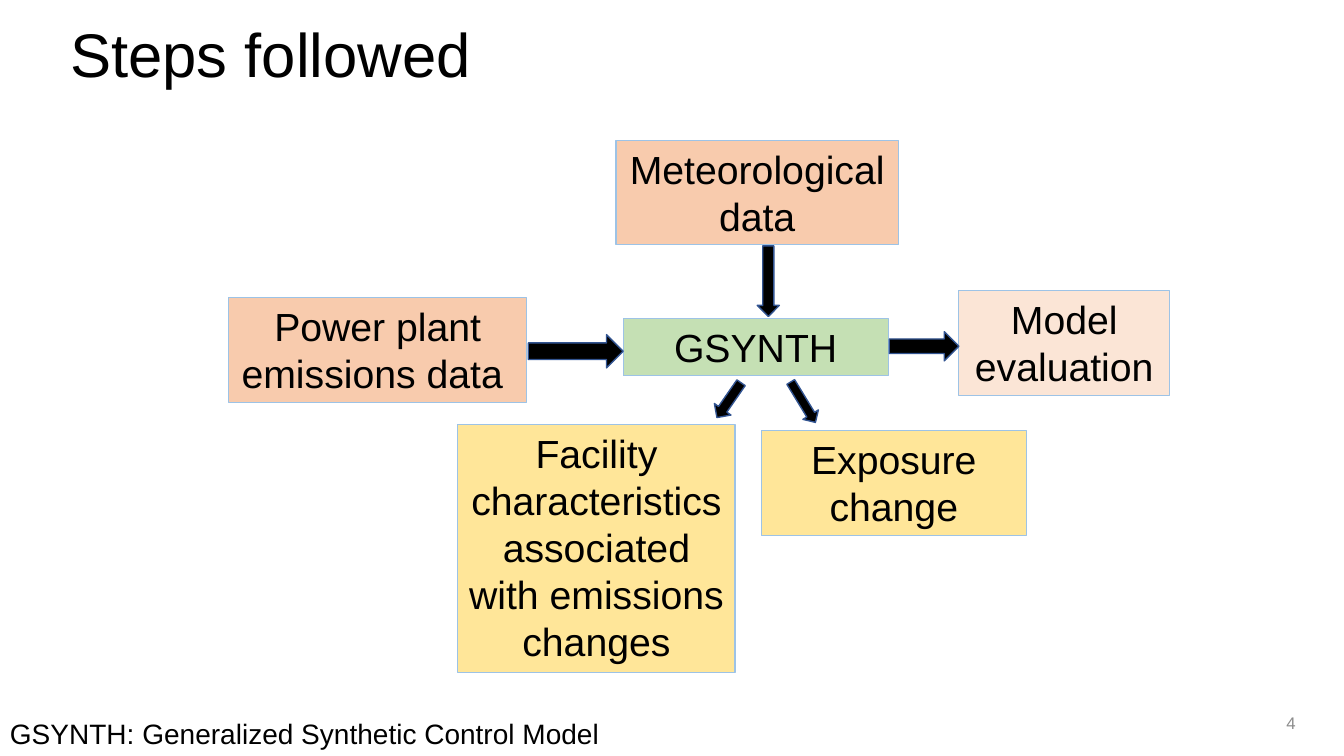
from typing import NamedTuple

from pptx import Presentation
from pptx.dml.color import RGBColor
from pptx.enum.shapes import MSO_SHAPE as Shape
from pptx.enum.text import MSO_ANCHOR as Anchor, PP_ALIGN as Align
from pptx.util import Emu, Pt

SCALE = 9144  # EMU per px, 100 px to the inch

BLACK = RGBColor(0x00, 0x00, 0x00)
GRAY = RGBColor(0x8C, 0x8C, 0x8C)
PEACH = RGBColor(0xF8, 0xCB, 0xAD)
PALE = RGBColor(0xFB, 0xE5, 0xD6)
GREEN = RGBColor(0xC5, 0xE0, 0xB4)
YELLOW = RGBColor(0xFF, 0xE6, 0x99)
SKY = RGBColor(0x9D, 0xC3, 0xE6)
NAVY = RGBColor(0x32, 0x54, 0x91)


class Area(NamedTuple):
    left: int
    top: int
    width: int
    height: int


class Box(NamedTuple):
    text: str
    area: Area
    fill: RGBColor


class Arrow(NamedTuple):
    area: Area
    turn: float = 0


BOXES = [
    Box("Power plant emissions data ", Area(227, 295, 295, 104), PEACH),
    Box("Meteorological data", Area(611, 139, 280, 104), PEACH),
    Box("GSYNTH", Area(618, 316, 263, 57), GREEN),
    Box("Facility characteristics associated with emissions changes",
        Area(454, 421, 275, 246), YELLOW),
    Box("Exposure change", Area(755, 427, 263, 104), YELLOW),
    Box("Model evaluation", Area(951, 288, 209, 104), PALE),
]

ARROWS = [
    Arrow(Area(727, 268, 70, 22), 90),
    Arrow(Area(702, 387, 42, 20), 124.7),
    Arrow(Area(773, 390, 47, 18), 58.6),
    Arrow(Area(524, 332, 94, 33)),
    Arrow(Area(882, 329, 69, 29)),
]


def px(count: int) -> Emu:
    return Emu(count * SCALE)


def put_text(shape, text: str, *, size: int, color: RGBColor = BLACK,
             align: Align = Align.LEFT, anchor: Anchor = Anchor.TOP,
             space: float = 1.0) -> None:
    frame = shape.text_frame
    frame.word_wrap = True
    frame.vertical_anchor = anchor
    para = frame.paragraphs[0]
    para.alignment = align
    para.line_spacing = space
    run = para.add_run()
    run.text = text
    run.font.name = "Arial"
    run.font.size = Pt(size)
    run.font.color.rgb = color


def add_label(slide, area: Area, text: str, **style) -> None:
    put_text(slide.shapes.add_textbox(*map(px, area)), text, **style)


def add_form(slide, kind: Shape, area: Area, fill: RGBColor,
             line: RGBColor, width: float):
    form = slide.shapes.add_shape(kind, *map(px, area))
    form.shadow.inherit = False
    form.fill.solid()
    form.fill.fore_color.rgb = fill
    form.line.color.rgb = line
    form.line.width = Pt(width)
    return form


def add_box(slide, box: Box) -> None:
    form = add_form(slide, Shape.RECTANGLE, box.area, box.fill, SKY, 0.75)
    put_text(form, box.text, size=28, align=Align.CENTER)


def add_arrow(slide, arrow: Arrow) -> None:
    form = add_form(slide, Shape.RIGHT_ARROW, arrow.area, BLACK, NAVY, 1)
    form.rotation = arrow.turn


def main() -> None:
    deck = Presentation()
    deck.slide_width, deck.slide_height = px(1333), px(750)
    slide = deck.slides.add_slide(deck.slide_layouts[6])

    # Title and page number
    add_label(slide, Area(60, 28, 1150, 58), "Steps followed",
              size=44, anchor=Anchor.MIDDLE, space=0.9)
    add_label(slide, Area(995, 697, 300, 40), "4", size=12, color=GRAY,
              align=Align.RIGHT, anchor=Anchor.MIDDLE)

    # Flow chart
    for box in BOXES:
        add_box(slide, box)
    for arrow in ARROWS:
        add_arrow(slide, arrow)

    # Footnote
    add_label(slide, Area(0, 706, 665, 44),
              "GSYNTH: Generalized Synthetic Control Model", size=20)

    deck.save("out.pptx")


if __name__ == "__main__":
    main()
